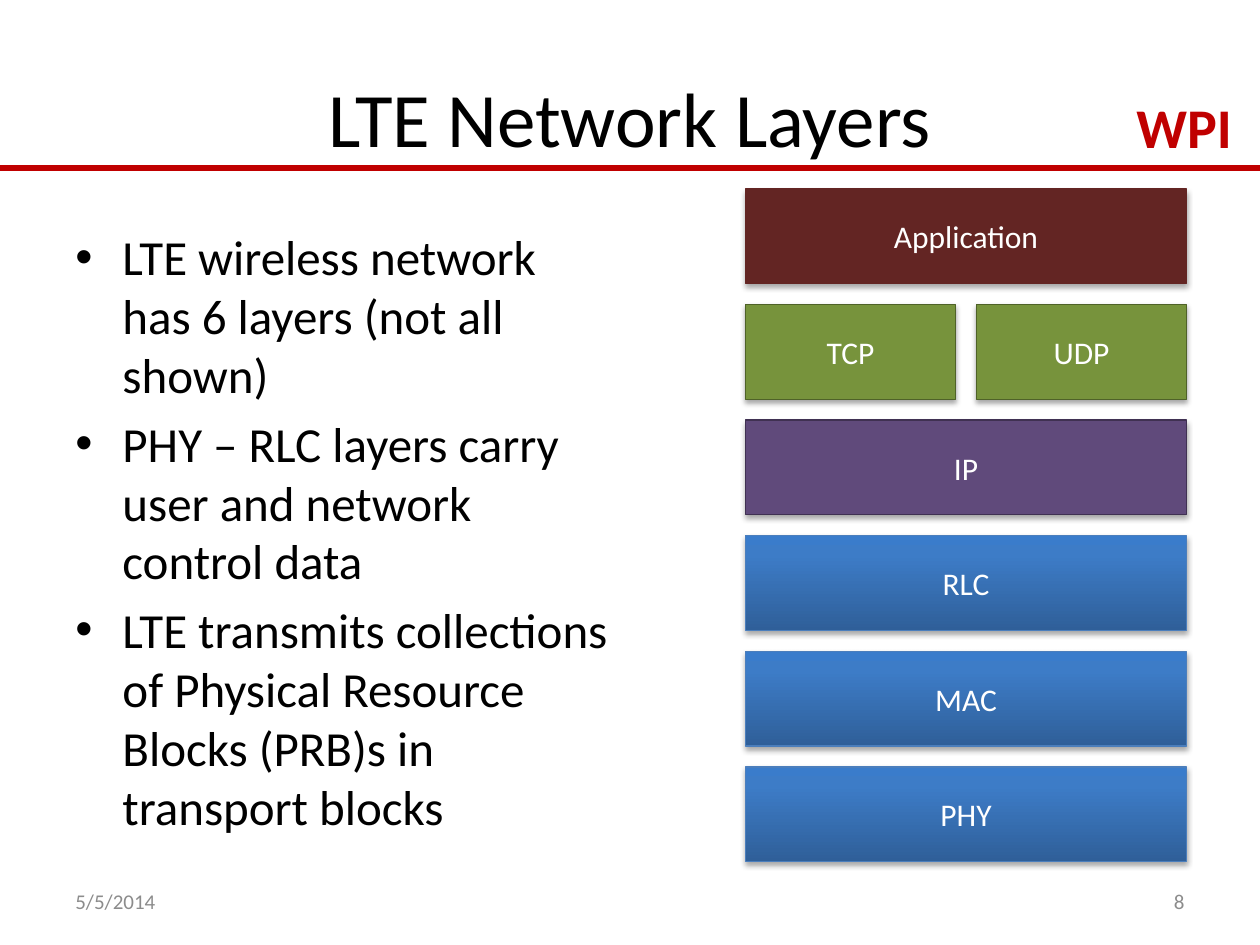
"""Build the LTE Network Layers slide."""
from lxml import etree
from pptx import Presentation
from pptx.dml.color import RGBColor
from pptx.enum.shapes import MSO_CONNECTOR, MSO_SHAPE
from pptx.enum.text import MSO_ANCHOR, PP_ALIGN
from pptx.oxml import parse_xml
from pptx.oxml.ns import nsdecls, qn
from pptx.util import Cm, Pt

LEFT, CENTER, RIGHT = PP_ALIGN.LEFT, PP_ALIGN.CENTER, PP_ALIGN.RIGHT
TOP, MIDDLE = MSO_ANCHOR.TOP, MSO_ANCHOR.MIDDLE
RECTANGLE, STRAIGHT = MSO_SHAPE.RECTANGLE, MSO_CONNECTOR.STRAIGHT

COLORS = {
    "red": "C00000", "black": "000000", "gray": "8C8C8C", "white": "FFFFFF",
    "maroon": "632523", "green": "77933C", "green edge": "4F6228",
    "purple": "604A7B", "purple edge": "403152", "blue edge": "4B7EBC",
}
BLUE_STOPS = [(0, "2F5F99"), (80, "3D7CC7"), (100, "3A7CCB")]


def rgb(name):
    return RGBColor.from_string(COLORS[name])


def write(shape, lines, size, color, align=LEFT, anchor=TOP, bold=False, wrap=True, bullets=False):
    frame = shape.text_frame
    frame.word_wrap = wrap
    frame.vertical_anchor = anchor
    frame.text = "\n".join(lines)
    for number, paragraph in enumerate(frame.paragraphs):
        paragraph.alignment = align
        if bullets:
            properties = paragraph._p.get_or_add_pPr()
            properties.set("marL", str(Cm(0.95)))
            properties.set("indent", str(Cm(-0.95)))
            etree.SubElement(properties, qn("a:buFont")).set("typeface", "Arial")
            etree.SubElement(properties, qn("a:buChar")).set("char", "•")
            if number:
                paragraph.space_before = Pt(5.6)
        paragraph.font.name = "Calibri"
        paragraph.font.size = Pt(size)
        paragraph.font.bold = bold
        paragraph.font.color.rgb = rgb(color)


prs = Presentation()
prs.slide_width, prs.slide_height = Cm(25.4), Cm(19.05)
slide = prs.slides.add_slide(prs.slide_layouts[6])
shapes = slide.shapes

school = shapes.add_textbox(Cm(22.66), Cm(1.75), Cm(2.46), Cm(1.63))
write(school, ["WPI"], 32, "red", bold=True, wrap=False)

header_rule = shapes.add_connector(STRAIGHT, 0, Cm(3.38), prs.slide_width, Cm(3.38))
header_rule.line.color.rgb = rgb("red")
header_rule.line.width = Pt(3.25)
etree.SubElement(header_rule._element.spPr, qn("a:effectLst"))

title = shapes.add_textbox(Cm(1.27), Cm(0.76), Cm(22.86), Cm(3.18))
write(title, ["LTE Network Layers"], 44, "black", CENTER, MIDDLE)

summary = shapes.add_textbox(Cm(1.27), Cm(4.45), Cm(11.23), Cm(12.57))
write(summary, [
    "LTE wireless network has 6 layers (not all shown)",
    "PHY – RLC layers carry user and network control data",
    "LTE transmits collections of Physical Resource Blocks (PRB)s in transport blocks",
], 28, "black", bullets=True)

for left, text, align in [(1.27, "5/5/2014", LEFT), (18.21, "8", RIGHT)]:
    footer = shapes.add_textbox(Cm(left), Cm(17.65), Cm(5.92), Cm(1.02))
    write(footer, [text], 12, "gray", align, MIDDLE)

STACK_LEFT, STACK_TOP, STACK_WIDTH = 15.03, 3.81, 8.89
LAYER_HEIGHT, GAP = 1.91, 0.42
layers = [
    (["Application"], "maroon", "maroon"),
    (["TCP", "UDP"], "green", "green edge"),
    (["IP"], "purple", "purple edge"),
    (["RLC"], None, "blue edge"),
    (["MAC"], None, "blue edge"),
    (["PHY"], None, "blue edge"),
]
stops = "".join(
    f'<a:gs pos="{position * 1000}"><a:srgbClr val="{color}"/></a:gs>'
    for position, color in BLUE_STOPS
)
for row, (protocols, fill, edge) in enumerate(layers):
    width = (STACK_WIDTH - GAP * (len(protocols) - 1)) / len(protocols)
    top = STACK_TOP + row * (LAYER_HEIGHT + GAP)
    for column, protocol in enumerate(protocols):
        left = STACK_LEFT + column * (width + GAP)
        layer = shapes.add_shape(RECTANGLE, Cm(left), Cm(top), Cm(width), Cm(LAYER_HEIGHT))
        properties = layer._element.spPr
        if fill:
            layer.fill.solid()
            layer.fill.fore_color.rgb = rgb(fill)
        else:
            properties.insert(2, parse_xml(
                f'<a:gradFill {nsdecls("a")} rotWithShape="1"><a:gsLst>{stops}</a:gsLst>'
                '<a:lin ang="16200000" scaled="0"/></a:gradFill>'))
        layer.line.color.rgb = rgb(edge)
        layer.line.width = Pt(0.75)
        layer.shadow.inherit = False
        properties.find(qn("a:effectLst")).append(parse_xml(
            f'<a:outerShdw {nsdecls("a")} blurRad="{Pt(3.1)}" dist="{Pt(1.8)}" dir="5400000" '
            f'rotWithShape="0"><a:srgbClr val="{COLORS["black"]}"><a:alpha val="35000"/>'
            '</a:srgbClr></a:outerShdw>'))
        write(layer, [protocol], 18, "white", CENTER, MIDDLE)

prs.save("out.pptx")
